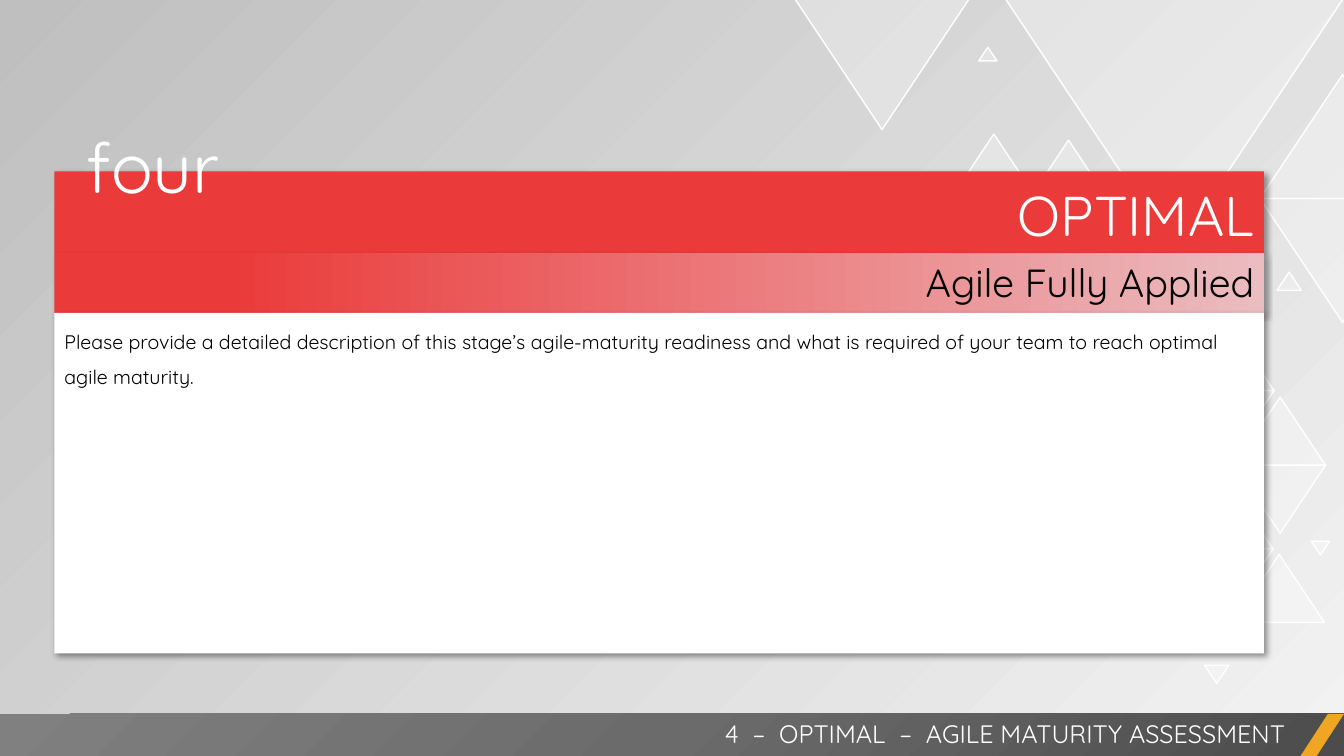
from lxml.etree import SubElement
from pptx import Presentation
from pptx.dml.color import RGBColor
from pptx.enum.shapes import MSO_SHAPE
from pptx.enum.text import MSO_ANCHOR, MSO_AUTO_SIZE, PP_ALIGN
from pptx.oxml import parse_xml
from pptx.oxml.ns import nsdecls, qn
from pptx.util import Pt

WIDTH, HEIGHT = 960, 540
WHITE, BLACK, RED = "FFFFFF", "000000", "EB3A3A"

DIAMONDS = [
    (650.9, 95.8, 118), (844.6, 343.4, 64.8), (845.3, 230.4, 64.8),
    (882, 283.7, 64.8), (900, 53.3, 118),
]
UP_TRIANGLES = [
    (717.8, 192.2, 118), (881.3, 396, 64.8), (912.2, 194.4, 17.3),
    (699.1, 33.8, 13), (747.4, 100.1, 31.7),
]
DOWN_TRIANGLES = [
    (717.8, -1.4, 241.9), (860.4, 475.2, 17.3),
    (936.7, 386.6, 13), (567.4, -1.4, 125.3),
]


def rgb(color):
    return RGBColor.from_string(color)


class Deck:
    """Hold the style and the current slide, and draw its elements."""

    font = "Quicksand"
    slope = 0.75

    def __init__(self):
        self.prs = Presentation()
        self.prs.slide_width, self.prs.slide_height = Pt(WIDTH), Pt(HEIGHT)
        self.s = self.prs.slides.add_slide(self.prs.slide_layouts[6])

    def gradient(self, fill, angle, stops):
        fill.gradient()
        fill.gradient_angle = angle
        for stop, (position, color) in zip(fill.gradient_stops, stops):
            stop.position = position
            stop.color.rgb = rgb(color)

    def corner_glow(self, sp, stops):
        marks = "".join(
            f'<a:gs pos="{pos}"><a:srgbClr val="{color}"/></a:gs>'
            for pos, color in stops
        )
        fill = parse_xml(
            f'<a:gradFill {nsdecls("a")} rotWithShape="1"><a:gsLst>{marks}</a:gsLst>'
            '<a:path path="circle"><a:fillToRect l="100000" t="100000"/></a:path>'
            '</a:gradFill>'
        )
        solid = sp._element.spPr.find(qn("a:solidFill"))
        solid.getparent().replace(solid, fill)

    def shape(self, kind, box, color, parent=None):
        shapes = (parent or self.s).shapes
        sp = shapes.add_shape(kind, *map(Pt, box))
        sp.fill.solid()
        sp.fill.fore_color.rgb = rgb(color)
        sp.line.fill.background()
        sp.shadow.inherit = False
        return sp

    def triangle(self, group, left, top, width, rotation=0):
        box = (left, top, width, width * self.slope)
        sp = self.shape(MSO_SHAPE.ISOSCELES_TRIANGLE, box, WHITE, group)
        sp.rotation = rotation
        sp.line.color.rgb = rgb(WHITE)
        sp.line.width = Pt(1)
        clr = sp._element.spPr.find(qn("a:solidFill"))[0]
        SubElement(clr, qn("a:alpha"), val="30000")

    def text(self, tf, words, size, color, frame=None, para=None):
        font = {"name": self.font, "size": Pt(size)}
        p = tf.paragraphs[0]
        r = p.add_run()
        r.text = words
        r.font.color.rgb = rgb(color)
        frame = {"word_wrap": True, "vertical_anchor": MSO_ANCHOR.TOP, **(frame or {})}
        para = {"alignment": PP_ALIGN.LEFT, **(para or {})}
        for target, values in ((tf, frame), (p, para), (r.font, font)):
            for key, value in values.items():
                setattr(target, key, value)

    def panel(self, box, fill, words, size, color, frame=None, para=None):
        sp = self.shape(MSO_SHAPE.RECTANGLE, box, fill)
        effects = sp._element.spPr.find(qn("a:effectLst"))
        effects.append(parse_xml(
            f'<a:outerShdw {nsdecls("a")} blurRad="{Pt(4)}" dist="{Pt(3)}" '
            'dir="2700000" algn="tl" rotWithShape="0"><a:srgbClr val="000000">'
            '<a:alpha val="40000"/></a:srgbClr></a:outerShdw>'
        ))
        self.text(sp.text_frame, words, size, color, frame, para)
        return sp

    def label(self, box, words, size, color, para=None):
        tf = self.s.shapes.add_textbox(*map(Pt, box)).text_frame
        frame = {"auto_size": MSO_AUTO_SIZE.SHAPE_TO_FIT_TEXT}
        self.text(tf, words, size, color, frame, para)


def main():
    deck = Deck()
    right = {"alignment": PP_ALIGN.RIGHT}
    deck.gradient(deck.s.background.fill, 135, [(0, "F2F2F2"), (1, "BFBFBF")])

    mosaic = deck.s.shapes.add_group_shape()
    for left, top, width in DIAMONDS:
        deck.triangle(mosaic, left, top, width)
        deck.triangle(mosaic, left, top + width * deck.slope, width, 180)
    for place in UP_TRIANGLES:
        deck.triangle(mosaic, *place)
    for place in DOWN_TRIANGLES:
        deck.triangle(mosaic, *place, 180)

    footer_top, footer_height = 510, 30
    footer = deck.shape(MSO_SHAPE.RECTANGLE, (0, footer_top, WIDTH, footer_height), "6B6B6B")
    deck.corner_glow(footer, [(0, "4C4C4C"), (50000, "6B6B6B"), (100000, "808080")])
    accent = deck.shape(MSO_SHAPE.PARALLELOGRAM, (929, footer_top, 31, footer_height), "F0A622")
    accent.adjustments[0] = 0.65
    deck.label((378, 509.8, 547.2, 28.8), "4  –  OPTIMAL  –  AGILE MATURITY ASSESSMENT",
               18, WHITE, right)

    left, width = 38.9, 864
    deck.panel((left, 122.4, width, 58.3), RED, "OPTIMAL", 40, WHITE,
               {"vertical_anchor": MSO_ANCHOR.BOTTOM}, right)
    subtitle = deck.panel((left, 180.7, width, 43), RED, "Agile Fully Applied",
                          28, BLACK, para=right)
    deck.gradient(subtitle.fill, 0, [(0.14, RED), (1, "EBBCC0")])
    deck.panel((left, 223.4, width, 243.4), WHITE,
               "Please provide a detailed description of this stage’s agile-maturity "
               "readiness and what is required of your team to reach optimal agile maturity.",
               14, BLACK, para={"line_spacing": 1.5})
    deck.label((54.7, 85, 136.8, 67.7), "four", 50, WHITE)
    deck.prs.save("out.pptx")


if __name__ == "__main__":
    main()
